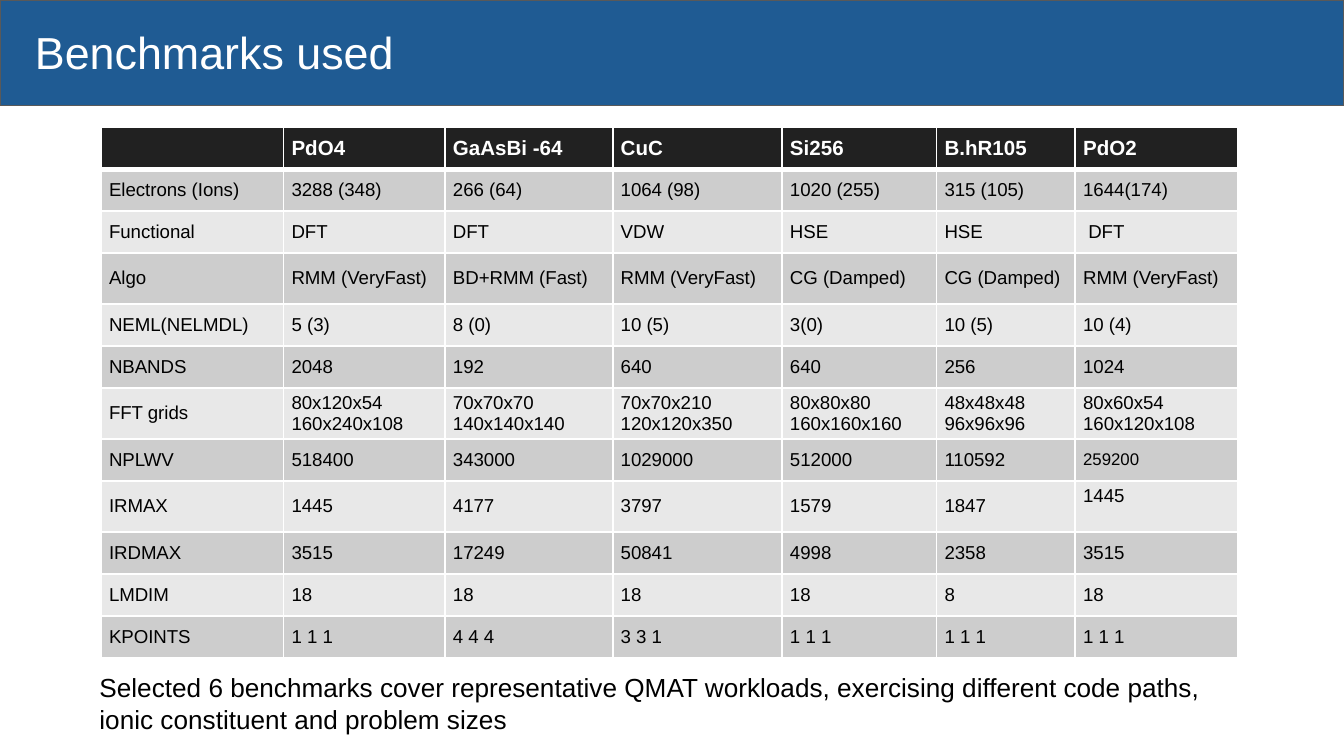
from lxml.etree import SubElement
from pptx import Presentation
from pptx.dml.color import RGBColor
from pptx.enum.shapes import MSO_SHAPE as Shape
from pptx.enum.text import MSO_ANCHOR as Anchor, MSO_AUTO_SIZE as AutoSize, PP_ALIGN as Align
from pptx.oxml.ns import qn
from pptx.util import Cm, Pt

FONT = "Arial"
COLUMN_WIDTHS = [3.45, 3.05, 3.17, 3.2, 2.92, 2.62, 3.07]
ROW_HEIGHT, TALL_ROW_HEIGHT = 0.79, 0.97
TALL_ROWS = ("Algo", "FFT grids", "IRMAX")
BENCHMARKS = [
    ["", "PdO4", "GaAsBi -64", "CuC", "Si256", "B.hR105", "PdO2"],
    ["Electrons (Ions)", "3288 (348)", "266 (64)", "1064 (98)", "1020 (255)", "315 (105)", "1644(174)"],
    ["Functional", "DFT", "DFT", "VDW", "HSE", "HSE", " DFT"],
    ["Algo", "RMM (VeryFast)", "BD+RMM (Fast)", "RMM (VeryFast)", "CG (Damped)", "CG (Damped)",
     "RMM (VeryFast)"],
    ["NEML(NELMDL)", "5 (3)", "8 (0)", "10 (5)", "3(0)", "10 (5)", "10 (4)"],
    ["NBANDS", "2048", "192", "640", "640", "256", "1024"],
    ["FFT grids", "80x120x54\n160x240x108", "70x70x70\n140x140x140", "70x70x210\n120x120x350",
     "80x80x80\n160x160x160", "48x48x48\n96x96x96", "80x60x54\n160x120x108"],
    ["NPLWV", "518400", "343000", "1029000", "512000", "110592", "259200"],
    ["IRMAX", "1445", "4177", "3797", "1579", "1847", "1445"],
    ["IRDMAX", "3515", "17249", "50841", "4998", "2358", "3515"],
    ["LMDIM", "18", "18", "18", "18", "8", "18"],
    ["KPOINTS", "1 1 1", "4 4 4", "3 3 1", "1 1 1", "1 1 1", "1 1 1"],
]
CAPTION = ("Selected 6 benchmarks cover representative QMAT workloads, exercising different "
           "code paths, ionic constituent and problem sizes")


def paint(color_format, value):
    """Give a fill's or font's colour format a hex colour."""
    color_format.rgb = RGBColor.from_string(value)


def place(item, box):
    """Move an item to a box of left, top, width and height in centimetres."""
    item.left, item.top, item.width, item.height = (Cm(length) for length in box)


def write(frame, text, size, color, bold=False, align=Align.LEFT):
    """Write each line of a text as a paragraph with one run."""
    for index, line in enumerate(text.split("\n")):
        para = frame.add_paragraph() if index else frame.paragraphs[0]
        para.alignment = align
        if line:
            span = para.add_run()
            span.text = line
            span.font.name, span.font.size, span.font.bold = FONT, Pt(size), bold
            paint(span.font.color, color)


def set_borders(cell, top, bottom):
    """Draw white cell borders, with top and bottom widths in points."""
    properties = cell._tc.get_or_add_tcPr()
    for side, width in (("L", 1), ("R", 1), ("T", top), ("B", bottom)):
        line = SubElement(properties, qn(f"a:ln{side}"), w=str(Pt(width)))
        SubElement(SubElement(line, qn("a:solidFill")), qn("a:srgbClr"), val="FFFFFF")


def add_header(page, box):
    """Place the blue band and the slide title on it."""
    left, top, width, height = box
    band = page.shapes.add_shape(Shape.RECTANGLE, 0, 0, 0, 0)
    place(band, box)
    band.shadow.inherit = False
    band.fill.solid()
    paint(band.fill.fore_color, "1F5B93")
    paint(band.line.color, "595959")
    band.line.width = Pt(0.75)
    page.shapes._spTree.insert(2, band._element)

    title = page.shapes.title
    place(title, (left + 0.41, top + 0.18, width - 0.92, height - 0.41))
    frame = title.text_frame
    frame.auto_size = AutoSize.NONE
    frame.vertical_anchor = Anchor.MIDDLE
    frame.margin_left = frame.margin_right = frame.margin_top = frame.margin_bottom = Cm(0.25)
    write(frame, "Benchmarks used", 24, "FFFFFF")


def add_benchmark_table(page, box):
    """Place the table of benchmark parameters."""
    left, top, width, height = (Cm(length) for length in box)
    table = page.shapes.add_table(len(BENCHMARKS), len(COLUMN_WIDTHS), left, top, width, height).table
    table.first_row = table.horz_banding = False
    for column, column_width in zip(table.columns, COLUMN_WIDTHS):
        column.width = Cm(column_width)
    for row_index, values in enumerate(BENCHMARKS):
        header = row_index == 0
        table.rows[row_index].height = Cm(TALL_ROW_HEIGHT if values[0] in TALL_ROWS else ROW_HEIGHT)
        row_fill = "212121" if header else ("E8E8E8", "CDCDCD")[row_index % 2]
        for column_index, value in enumerate(values):
            cell = table.cell(row_index, column_index)
            set_borders(cell, 3 if row_index == 1 else 1, 3 if header else 1)
            cell.fill.solid()
            paint(cell.fill.fore_color, row_fill)
            cell.vertical_anchor = Anchor.MIDDLE
            cell.margin_left = Cm(0.15)
            cell.margin_right = cell.margin_top = cell.margin_bottom = 0
            align = Align.LEFT if header or column_index else Align.JUSTIFY
            size = 11 if header else 9 if value == "259200" else 10
            write(cell.text_frame, value, size, "FFFFFF" if header else "000000", header, align)
            if values[0] == "IRMAX" and column_index == len(values) - 1:
                cell.margin_bottom = Cm(0.4)


def add_caption(page, box):
    """Place the summary sentence."""
    caption = page.shapes.add_textbox(*(Cm(length) for length in box))
    caption.text_frame.word_wrap = True
    caption.text_frame.auto_size = AutoSize.SHAPE_TO_FIT_TEXT
    write(caption.text_frame, CAPTION, 14, "000000")


def main():
    """Build the deck and save it."""
    deck = Presentation()
    deck.slide_width, deck.slide_height = Cm(25.4), Cm(14.29)
    page = deck.slides.add_slide(deck.slide_layouts[5])
    add_header(page, (0, 0, 25.4, 2))
    add_benchmark_table(page, (1.91, 2.41, 21.48, 10.02))
    add_caption(page, (1.63, 12.57, 22.07, 1.45))
    deck.save("out.pptx")


if __name__ == "__main__":
    main()
